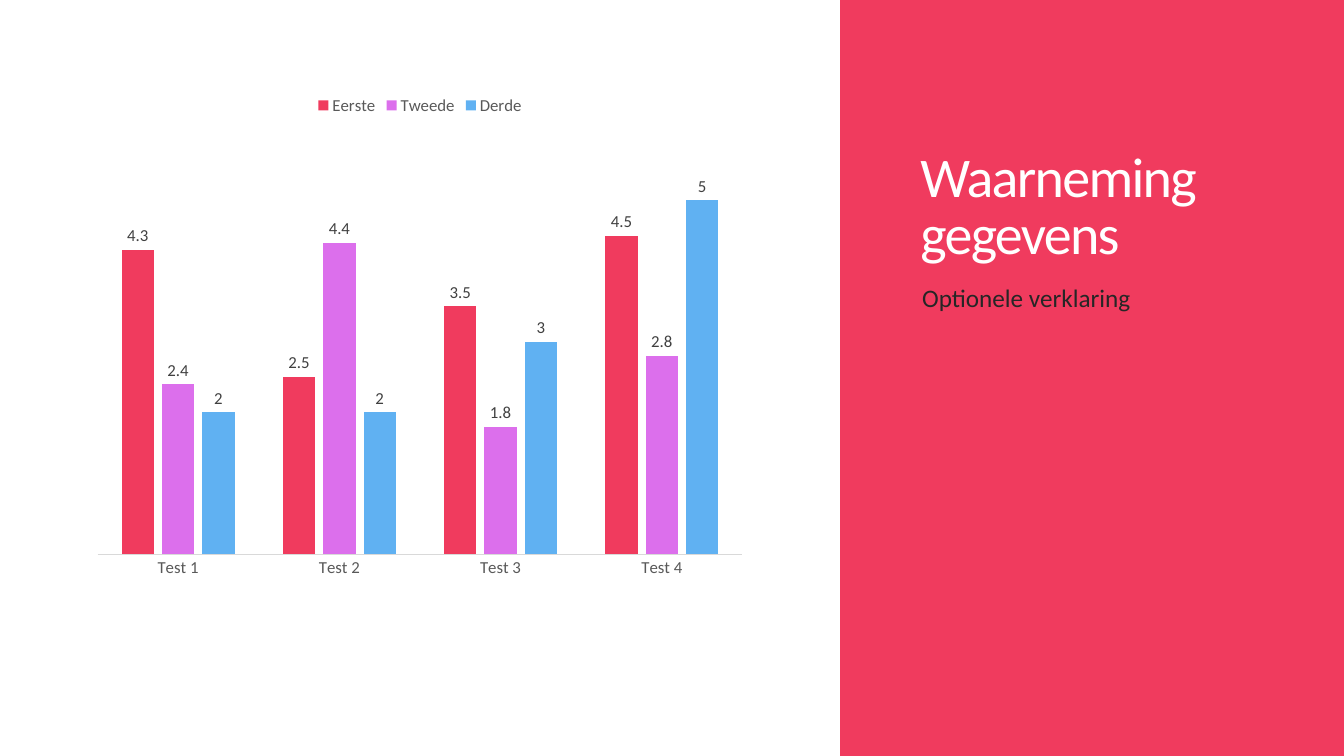
from dataclasses import dataclass

from pptx import Presentation
from pptx import util as u
from pptx.chart.data import CategoryChartData
from pptx.dml.color import RGBColor
from pptx.enum import chart as ch
from pptx.enum import shapes, text


@dataclass(frozen=True)
class Theme:
    font: str = "Calibri"
    panel: str = "F03B5E"
    series: tuple = ("F03B5E", "DC6FEC", "60B1F2")
    light: str = "FFFFFF"
    body: str = "262626"
    label: str = "404040"
    axis: str = "595959"
    rule: str = "D9D9D9"
    title_size: int = 40
    body_size: int = 18
    chart_size: int = 12


class Deck:
    """Holds the theme and the current slide."""

    def __init__(self, theme):
        self.theme = theme
        self.file = Presentation()
        self.file.slide_width, self.file.slide_height = u.Cm(33.87), u.Cm(19.05)
        self.slide = self.file.slides.add_slide(self.file.slide_layouts[5])

    def style(self, font, size, color):
        font.name, font.size = self.theme.font, u.Pt(size)
        font.color.rgb = RGBColor.from_string(color)

    def panel(self, *box):
        rect = self.slide.shapes.add_shape(
            shapes.MSO_SHAPE.RECTANGLE, *map(u.Cm, box))
        rect.shadow.inherit = False
        rect.fill.solid()
        rect.fill.fore_color.rgb = RGBColor.from_string(self.theme.panel)
        rect.line.fill.background()
        # Send the panel behind the title
        self.slide.shapes.element.insert(2, rect.element)

    def label(self, shape, words, size, color, anchor):
        frame = shape.text_frame
        frame.text = words
        frame.word_wrap = True
        frame.auto_size = text.MSO_AUTO_SIZE.NONE
        frame.vertical_anchor = anchor
        para = frame.paragraphs[0]
        para.alignment = text.PP_ALIGN.LEFT
        self.style(para.runs[0].font, size, color)
        return para

    def title(self, words, *box):
        shape = self.slide.shapes.title
        shape.left, shape.top, shape.width, shape.height = map(u.Cm, box)
        para = self.label(shape, words, self.theme.title_size,
                          self.theme.light, text.MSO_ANCHOR.BOTTOM)
        para.line_spacing = 0.85
        # Tighten the letter spacing
        para.runs[0]._r.get_or_add_rPr().set("spc", "-120")

    def note(self, words, *box):
        shape = self.slide.shapes.add_textbox(*map(u.Cm, box))
        para = self.label(shape, words, self.theme.body_size,
                          self.theme.body, text.MSO_ANCHOR.TOP)
        para.space_before = u.Pt(12)

    def columns(self, cats, rows, *box):
        theme = self.theme
        data = CategoryChartData()
        data.categories = cats
        for name, vals in rows.items():
            data.add_series(name, vals)
        chart = self.slide.shapes.add_chart(
            ch.XL_CHART_TYPE.COLUMN_CLUSTERED, *map(u.Cm, box), data).chart
        self.style(chart.font, theme.chart_size, theme.axis)
        chart.has_title = False

        # Legend
        chart.has_legend = True
        chart.legend.position = ch.XL_LEGEND_POSITION.TOP
        chart.legend.include_in_layout = False
        self.style(chart.legend.font, theme.chart_size, theme.axis)

        # Axes
        value = chart.value_axis
        value.visible = value.has_major_gridlines = False
        value.minimum_scale, value.maximum_scale = 0, 6
        axis = chart.category_axis
        axis.major_tick_mark = ch.XL_TICK_MARK.NONE
        axis.format.line.color.rgb = RGBColor.from_string(theme.rule)
        axis.format.line.width = u.Pt(0.75)
        self.style(axis.tick_labels.font, theme.chart_size, theme.axis)

        # Columns and their labels
        plot = chart.plots[0]
        plot.gap_width, plot.overlap = 150, -25
        plot.vary_by_categories = False
        for row, color in zip(plot.series, theme.series):
            row.format.fill.solid()
            row.format.fill.fore_color.rgb = RGBColor.from_string(color)
            tags = row.data_labels
            tags.show_value = True
            tags.position = ch.XL_LABEL_POSITION.OUTSIDE_END
            self.style(tags.font, theme.chart_size, theme.label)


def main():
    deck = Deck(Theme())

    # Text side
    deck.panel(21.17, 0, 12.7, 19.05)
    deck.title("Waarneming gegevens", 22.94, 1.5, 9.4, 5.33)
    deck.note("Optionele verklaring", 22.99, 6.99, 9.45, 8.69)

    # Chart side
    deck.columns(
        [f"Test {n}" for n in range(1, 5)],
        {"Eerste": (4.3, 2.5, 3.5, 4.5),
         "Tweede": (2.4, 4.4, 1.8, 2.8),
         "Derde": (2, 2, 3, 5)},
        2.12, 2.12, 16.93, 12.7)

    deck.file.save("out.pptx")


if __name__ == "__main__":
    main()
